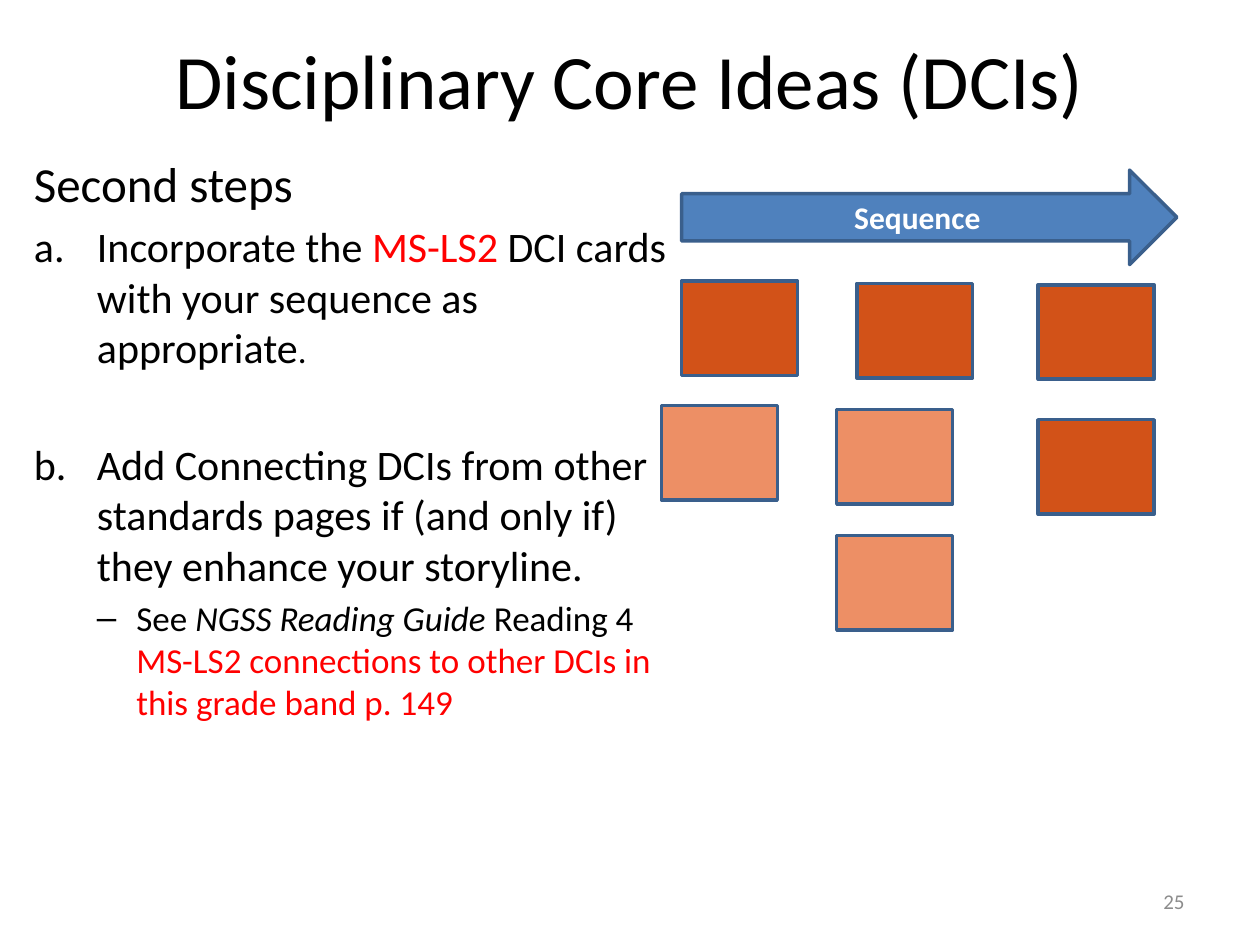
from lxml.etree import SubElement
from pptx import Presentation
from pptx.dml.color import RGBColor
from pptx.enum.shapes import MSO_SHAPE as Preset
from pptx.enum.text import MSO_ANCHOR as Anchor, MSO_AUTO_SIZE as AutoSize, PP_ALIGN as Align
from pptx.oxml.ns import qn
from pptx.util import Pt

FONT = "Calibri"
BLACK = RGBColor(0x00, 0x00, 0x00)
WHITE = RGBColor(0xFF, 0xFF, 0xFF)
RED = RGBColor(0xFF, 0x00, 0x00)
GRAY = RGBColor(0x8C, 0x8C, 0x8C)
BLUE = RGBColor(0x4F, 0x81, 0xBD)
OUTLINE = RGBColor(0x3A, 0x5F, 0x8C)
ORANGE = RGBColor(0xD2, 0x52, 0x18)
LIGHT_ORANGE = RGBColor(0xED, 0x8F, 0x65)

CARD_WIDTH, CARD_HEIGHT = 66.2, 54
# Left and top of each card, in points
SEQUENCE_CARDS = [(593.3, 239.8), (593.3, 162.7), (389.5, 160.6), (489.6, 162)]
CONNECTING_CARDS = [(378, 231.8), (478.1, 234), (478.1, 306)]


def place(shape, left, top, width, height):
    shape.left, shape.top = Pt(left), Pt(top)
    shape.width, shape.height = Pt(width), Pt(height)


def style_font(font, size, color=BLACK):
    font.name = FONT
    font.size = Pt(size)
    font.color.rgb = color


def add_runs(paragraph, size, runs):
    """Add (text, font overrides) pairs to a paragraph of one base size."""
    style_font(paragraph.font, size)
    for text, overrides in runs:
        run = paragraph.add_run()
        run.text = text
        if "color" in overrides:
            run.font.color.rgb = overrides["color"]
        if "size" in overrides:
            run.font.size = Pt(overrides["size"])
        if "italic" in overrides:
            run.font.italic = overrides["italic"]


def set_list_style(paragraph, indent, bullet_tag, **attributes):
    """Give a paragraph a hanging indent in points and a bullet element."""
    properties = paragraph._p.get_or_add_pPr()
    properties.set("marL", str(Pt(indent)))
    properties.set("indent", str(-Pt(indent)))
    SubElement(properties, qn(bullet_tag), attributes)


def add_lettered_item(frame, runs, space_before=None):
    paragraph = frame.add_paragraph()
    if space_before:
        paragraph.space_before = Pt(space_before)
    set_list_style(paragraph, 36, "a:buAutoNum", type="alphaLcPeriod")
    add_runs(paragraph, 24, runs)


def fill_title(title):
    place(title, 36, 0, 648, 90)
    title.text_frame.text = "Disciplinary Core Ideas (DCIs)"
    style_font(title.text_frame.paragraphs[0].font, 44)


def fill_body(body):
    place(body, 12.2, 84.2, 378, 414)
    frame = body.text_frame
    frame.auto_size = AutoSize.NONE

    heading = frame.paragraphs[0]
    set_list_style(heading, 0, "a:buNone")
    add_runs(heading, 28, [("Second steps", {})])

    add_lettered_item(frame, [
        ("Incorporate the ", {}),
        ("MS-LS2", {"color": RED}),
        (" DCI cards with your sequence as appropriate", {}),
        (".", {"size": 20}),
    ])
    add_lettered_item(frame, [
        ("Add Connecting DCIs from other standards pages if (and only if) "
         "they enhance your storyline.", {}),
    ], space_before=38)

    detail = frame.add_paragraph()
    detail.level = 1
    add_runs(detail, 20, [
        ("See ", {}),
        ("NGSS Reading Guide ", {"italic": True}),
        ("Reading 4 ", {}),
        ("MS-LS2 connections to other DCIs in this grade band p. 149", {"color": RED}),
    ])


def add_outlined_shape(slide, preset, box, color):
    shape = slide.shapes.add_shape(preset, *(Pt(length) for length in box))
    shape.shadow.inherit = False
    shape.fill.solid()
    shape.fill.fore_color.rgb = color
    shape.line.color.rgb = OUTLINE
    shape.line.width = Pt(2)
    return shape


def add_cards(slide, positions, color):
    for left, top in positions:
        add_outlined_shape(slide, Preset.RECTANGLE, (left, top, CARD_WIDTH, CARD_HEIGHT), color)


def add_sequence_arrow(slide):
    arrow = add_outlined_shape(slide, Preset.RIGHT_ARROW, (389.5, 97.2, 283, 54), BLUE)
    arrow.text_frame.text = "Sequence"
    paragraph = arrow.text_frame.paragraphs[0]
    paragraph.alignment = Align.CENTER
    style_font(paragraph.font, 18, WHITE)
    paragraph.font.bold = True


def add_page_number(slide, number):
    box = slide.shapes.add_textbox(Pt(516), Pt(500.5), Pt(168), Pt(28.8))
    frame = box.text_frame
    frame.word_wrap = True
    frame.vertical_anchor = Anchor.MIDDLE
    frame.text = str(number)
    paragraph = frame.paragraphs[0]
    paragraph.alignment = Align.RIGHT
    style_font(paragraph.font, 12, GRAY)


def main():
    presentation = Presentation()
    presentation.slide_width, presentation.slide_height = Pt(720), Pt(540)
    slide = presentation.slides.add_slide(presentation.slide_layouts[1])
    fill_title(slide.shapes.title)
    fill_body(slide.placeholders[1])
    add_cards(slide, SEQUENCE_CARDS, ORANGE)
    add_sequence_arrow(slide)
    add_cards(slide, CONNECTING_CARDS, LIGHT_ORANGE)
    add_page_number(slide, 25)
    presentation.save("out.pptx")


if __name__ == "__main__":
    main()
